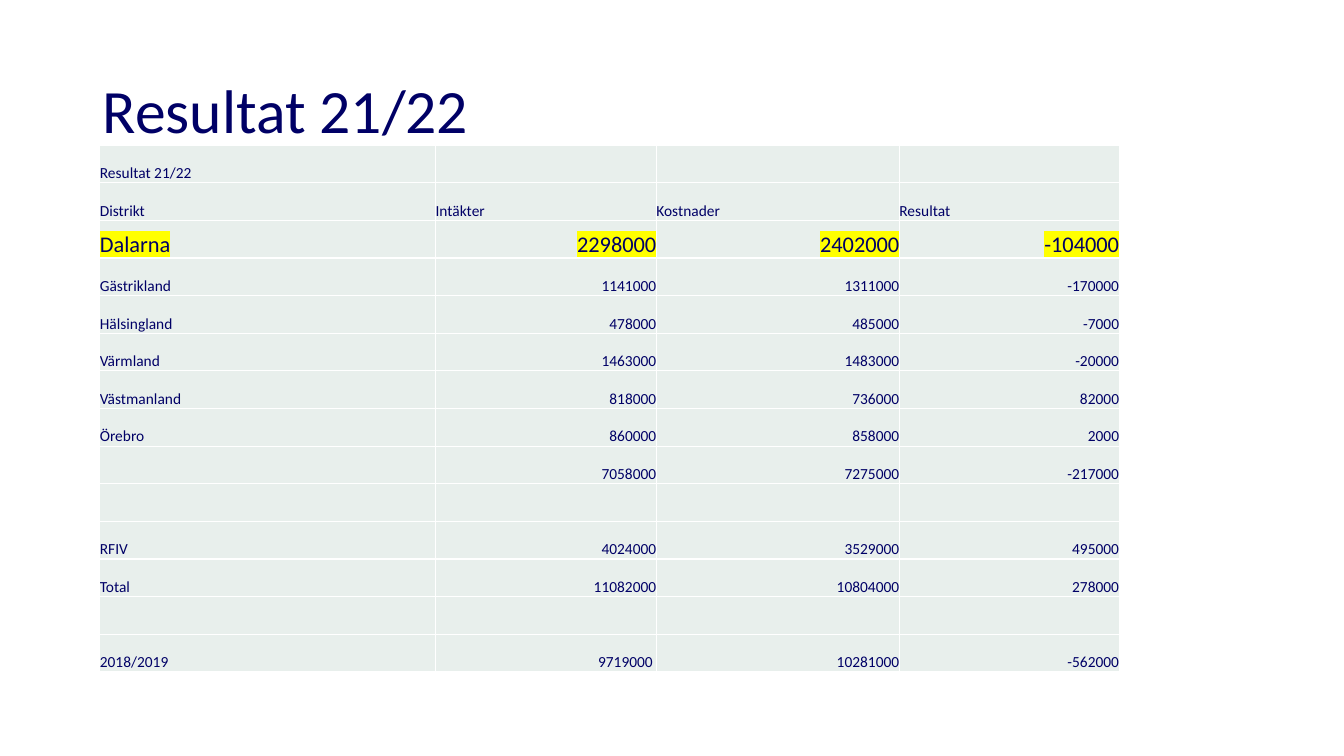
from lxml.etree import SubElement
from pptx import Presentation
from pptx.dml.color import RGBColor
from pptx.enum.text import MSO_ANCHOR as Anchor, PP_ALIGN as Align
from pptx.oxml import parse_xml
from pptx.oxml.ns import nsdecls, qn
from pptx.util import Inches, Pt

COLORS = {"ink": "000066", "cell": "E8EFEC", "border": "FFFFFF", "mark": "FFFF00"}
FONT = "Calibri"
COLUMN_WIDTHS = [3.33, 2.19, 2.41, 2.18]
HEADER_ROWS = 2
MARKED_DISTRICT = "Dalarna"
RESULTS = [
    ("Resultat 21/22", "", "", ""),
    ("Distrikt", "Intäkter", "Kostnader", "Resultat"),
    ("Dalarna", "2298000", "2402000", "-104000"),
    ("Gästrikland", "1141000", "1311000", "-170000"),
    ("Hälsingland", "478000", "485000", "-7000"),
    ("Värmland", "1463000", "1483000", "-20000"),
    ("Västmanland", "818000", "736000", "82000"),
    ("Örebro", "860000", "858000", "2000"),
    ("", "7058000", "7275000", "-217000"),
    ("", "", "", ""),
    ("RFIV", "4024000", "3529000", "495000"),
    ("Total", "11082000", "10804000", "278000"),
    ("", "", "", ""),
    ("2018/2019", "9719000 ", "10281000", "-562000"),
]


def write(frame, text, size=11, align=Align.LEFT, spacing=None, highlight=None):
    paragraph = frame.paragraphs[0]
    paragraph.alignment = align
    paragraph.line_spacing = spacing
    run = paragraph.add_run()
    run.text = text
    run.font.size = Pt(size)
    run.font.name = FONT
    run.font.color.rgb = RGBColor.from_string(COLORS["ink"])
    if highlight:
        mark = parse_xml(
            f'<a:highlight {nsdecls("a")}><a:srgbClr val="{highlight}"/></a:highlight>'
        )
        run.font._element.find(qn("a:solidFill")).addnext(mark)


def add_borders(cell, color, points):
    properties = cell._tc.get_or_add_tcPr()
    for index, side in enumerate(("lnL", "lnR", "lnT", "lnB")):
        line = parse_xml(f'<a:{side} {nsdecls("a")} w="{Pt(points)}"/>')
        fill = SubElement(line, qn("a:solidFill"))
        SubElement(fill, qn("a:srgbClr"), val=color)
        properties.insert(index, line)


def add_title(slide, left, top, width, height):
    box = slide.shapes.add_textbox(Inches(left), Inches(top), Inches(width), Inches(height))
    frame = box.text_frame
    frame.word_wrap = True
    frame.vertical_anchor = Anchor.MIDDLE
    write(frame, "Resultat 21/22", size=44, spacing=0.9)


def add_results(slide, left, top, width, height):
    table = slide.shapes.add_table(
        len(RESULTS), len(COLUMN_WIDTHS),
        Inches(left), Inches(top), Inches(width), Inches(height),
    ).table
    table.first_row = False
    table.horz_banding = False
    for column, share in zip(table.columns, COLUMN_WIDTHS):
        column.width = Inches(width * share / sum(COLUMN_WIDTHS))
    for row_index, values in enumerate(RESULTS):
        table.rows[row_index].height = Inches(height / len(RESULTS))
        marked = values[0] == MARKED_DISTRICT
        for column_index, value in enumerate(values):
            cell = table.cell(row_index, column_index)
            cell.margin_left = cell.margin_right = 0
            cell.margin_top = cell.margin_bottom = 0
            cell.vertical_anchor = Anchor.BOTTOM
            cell.fill.solid()
            cell.fill.fore_color.rgb = RGBColor.from_string(COLORS["cell"])
            add_borders(cell, COLORS["border"], 1)
            if value:
                numeric = row_index >= HEADER_ROWS and column_index > 0
                write(
                    cell.text_frame, value,
                    size=16 if marked else 11,
                    align=Align.RIGHT if numeric else Align.LEFT,
                    highlight=COLORS["mark"] if marked else None,
                )


def main():
    deck = Presentation()
    deck.slide_width = Inches(13.33)
    deck.slide_height = Inches(7.5)
    slide = deck.slides.add_slide(deck.slide_layouts[6])
    add_title(slide, 0.92, 0.4, 11.5, 1.45)
    add_results(slide, 0.99, 1.44, 10.11, 5.23)
    deck.save("out.pptx")


if __name__ == "__main__":
    main()
